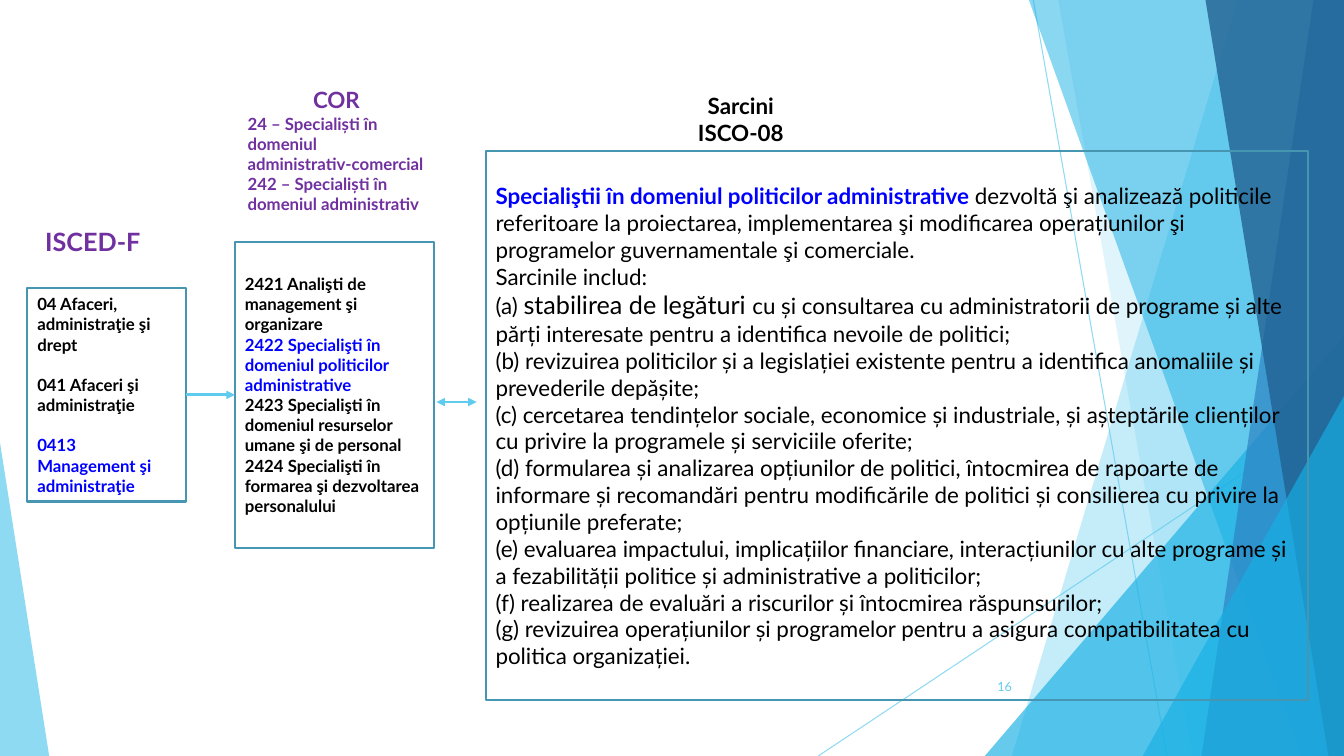
from dataclasses import dataclass
from typing import Optional

from lxml.etree import SubElement
from pptx import Presentation
from pptx.dml.color import RGBColor
from pptx.enum.shapes import MSO_CONNECTOR, MSO_SHAPE
from pptx.enum.text import MSO_ANCHOR, PP_ALIGN
from pptx.oxml.ns import qn
from pptx.util import Cm, Pt

PAGE_WIDTH = 33.87
PAGE_HEIGHT = 19.05


@dataclass(frozen=True)
class Theme:
    """Font, colours and type sizes of the slide."""

    font: str = "Lato"
    sky: str = "5FCBEF"
    azure: str = "17B0E4"
    blue: str = "2E83C3"
    navy: str = "226292"
    frame: str = "4696B1"
    ink: str = "000000"
    accent: str = "0000FF"
    heading: str = "7030A0"
    paper: str = "FFFFFF"
    tiny: float = 9
    small: float = 12
    body: float = 16
    large: float = 18


THEME = Theme()


@dataclass(frozen=True)
class Band:
    """A slanted band reaching the right edge of the page."""

    top: float
    bottom: float
    color: str
    opacity: int


@dataclass(frozen=True)
class Corner:
    """A translucent triangle standing on the bottom edge."""

    left: float
    width: float
    height: float
    apex: float
    color: str
    opacity: int


@dataclass(frozen=True)
class Span:
    """A stretch of text with its own look."""

    text: str
    size: float = THEME.body
    color: str = THEME.ink
    bold: bool = False


@dataclass(frozen=True)
class Para:
    """A paragraph made of spans."""

    spans: tuple[Span, ...]
    align: PP_ALIGN = PP_ALIGN.LEFT
    before: float = 0


@dataclass(frozen=True)
class Panel:
    """A rectangle holding text."""

    left: float
    top: float
    width: float
    height: float
    paras: tuple[Para, ...]
    line: Optional[str] = None
    fill: Optional[str] = None


def line_of(text: str, size: float = THEME.body, color: str = THEME.ink, bold: bool = False,
            align: PP_ALIGN = PP_ALIGN.LEFT, before: float = 0) -> Para:
    """Make a paragraph with a single look."""
    return Para((Span(text, size, color, bold),), align, before)


def title(text: str, size: float = THEME.body, color: str = THEME.heading) -> Para:
    """Make a centred bold paragraph."""
    return line_of(text, size, color, True, PP_ALIGN.CENTER)


def entry(text: str, color: str = THEME.ink, before: float = 0) -> Para:
    """Make a small bold paragraph."""
    return line_of(text, THEME.small, color, True, before=before)


BAND_GROUPS = (
    (Band(31.19, 25.5, THEME.sky, 36), Band(26.67, 30.05, THEME.sky, 20)),
    (Band(25.93, 32.79, THEME.azure, 50), Band(33.1, 30.28, THEME.blue, 70),
     Band(30.38, 33.48, THEME.navy, 80)),
)
CORNERS = (
    Corner(24.82, 9.05, 10.59, 1, THEME.azure, 66),
    Corner(28.8, 5.07, 9.07, 1, THEME.azure, 66),
    Corner(0, 1.24, 7.9, 0, THEME.sky, 70),
)
PAGE_NUMBER = Panel(23.85, 16.79, 1.9, 1.02, (
    line_of("16", THEME.tiny, THEME.sky, align=PP_ALIGN.RIGHT),))
ISCED = Panel(0.69, 7.26, 3.99, 5.38, (
    entry("04 Afaceri, administraţie şi drept"),
    entry("041 Afaceri şi administraţie", before=14.4),
    entry("0413 Management şi administraţie", THEME.accent, before=14.4),
), THEME.frame)
TASKS = Panel(12.24, 3.81, 20.73, 13.84, (
    Para((Span("Specialiştii în domeniul politicilor administrative ", color=THEME.accent, bold=True),
          Span("dezvoltă şi analizează politicile referitoare la proiectarea, implementarea şi "
               "modificarea operațiunilor şi programelor guvernamentale şi comerciale."))),
    line_of("Sarcinile includ:"),
    Para((Span("(a) "), Span("stabilirea de legături ", THEME.large),
          Span("cu și consultarea cu administratorii de programe și alte părți interesate "
               "pentru a identifica nevoile de politici;"))),
    line_of("(b) revizuirea politicilor și a legislației existente pentru a identifica "
            "anomaliile și prevederile depășite;"),
    line_of("(c) cercetarea tendințelor sociale, economice și industriale, și așteptările "
            "clienților cu privire la programele și serviciile oferite;"),
    line_of("(d) formularea și analizarea opțiunilor de politici, întocmirea de rapoarte de "
            "informare și recomandări pentru modificările de politici și consilierea cu "
            "privire la opțiunile preferate;"),
    line_of("(e) evaluarea impactului, implicațiilor financiare, interacțiunilor cu alte "
            "programe și a fezabilității politice și administrative a politicilor;"),
    line_of("(f) realizarea de evaluări a riscurilor și întocmirea răspunsurilor;"),
    line_of("(g) revizuirea operațiunilor și programelor pentru a asigura compatibilitatea "
            "cu politica organizației."),
), THEME.frame)
OCCUPATIONS = Panel(5.92, 6.1, 5.03, 7.7, (
    entry("2421 Analişti de management şi organizare"),
    entry("2422 Specialişti în domeniul politicilor administrative", THEME.accent),
    entry("2423 Specialişti în domeniul resurselor umane şi de personal"),
    entry("2424 Specialişti în formarea şi dezvoltarea personalului"),
), THEME.frame)
HEADINGS = (
    Panel(0.69, 5.33, 3.3, 1.5, (title("ISCED-F", THEME.large),)),
    Panel(16.18, 2.24, 4.98, 1.5, (title("Sarcini", color=THEME.ink),
                                   title("ISCO-08", color=THEME.ink))),
    Panel(5.99, 2.24, 4.98, 3.1, (
        title("COR"),
        entry("24 – Specialiști în domeniul administrativ-comercial", THEME.heading),
        entry("242 – Specialiști în domeniul administrativ", THEME.heading),
    ), fill=THEME.paper),
)


def fade(shape, opacity: int) -> None:
    """Make the colours of a shape translucent."""
    for color in shape.element.spPr.iter(qn("a:srgbClr")):
        SubElement(color, qn("a:alpha"), val=str(opacity * 1000))


def paint(shape, color: str, opacity: int) -> None:
    """Fill a shape with a translucent colour and no outline."""
    shape.shadow.inherit = False
    shape.line.fill.background()
    shape.fill.solid()
    shape.fill.fore_color.rgb = RGBColor.from_string(color)
    fade(shape, opacity)


def draw_band(page, band: Band) -> None:
    """Draw a band from the top to the bottom of the page."""
    builder = page.shapes.build_freeform(Cm(band.top), 0)
    corners = ((PAGE_WIDTH, 0), (PAGE_WIDTH, PAGE_HEIGHT), (band.bottom, PAGE_HEIGHT))
    builder.add_line_segments([(Cm(x), Cm(y)) for x, y in corners])
    paint(builder.convert_to_shape(), band.color, band.opacity)


def draw_corner(page, corner: Corner) -> None:
    """Draw a triangle on the bottom edge."""
    shape = page.shapes.add_shape(
        MSO_SHAPE.ISOSCELES_TRIANGLE, Cm(corner.left), Cm(PAGE_HEIGHT - corner.height),
        Cm(corner.width), Cm(corner.height))
    shape.adjustments[0] = corner.apex
    paint(shape, corner.color, corner.opacity)


def style(font, span: Span) -> None:
    """Give a font the look of a span."""
    font.name = THEME.font
    font.size = Pt(span.size)
    font.bold = span.bold
    font.color.rgb = RGBColor.from_string(span.color)


def draw_panel(page, panel: Panel):
    """Draw a rectangle with its text and return it."""
    place = [Cm(value) for value in (panel.left, panel.top, panel.width, panel.height)]
    if panel.line or panel.fill:
        box = page.shapes.add_shape(MSO_SHAPE.RECTANGLE, *place)
        box.shadow.inherit = False
        box.fill.background()
        box.line.fill.background()
    else:
        box = page.shapes.add_textbox(*place)
    if panel.fill:
        box.fill.solid()
        box.fill.fore_color.rgb = RGBColor.from_string(panel.fill)
    if panel.line:
        box.line.color.rgb = RGBColor.from_string(panel.line)
        box.line.width = Pt(1.5)
    frame = box.text_frame
    frame.word_wrap = True
    frame.vertical_anchor = MSO_ANCHOR.MIDDLE
    for index, para in enumerate(panel.paras):
        paragraph = frame.add_paragraph() if index else frame.paragraphs[0]
        paragraph.alignment = para.align
        if para.before:
            paragraph.space_before = Pt(para.before)
        for span in para.spans:
            run = paragraph.add_run()
            run.text = span.text
            style(run.font if len(para.spans) > 1 else paragraph.font, span)
    return box


def draw_line(page, start: tuple[float, float], end: tuple[float, float], width: float,
              arrows: tuple[str, ...] = ()):
    """Draw a straight line with the named arrowheads and return it."""
    line = page.shapes.add_connector(MSO_CONNECTOR.STRAIGHT, *(Cm(value) for value in start + end))
    line.line.color.rgb = RGBColor.from_string(THEME.sky)
    line.line.width = Pt(width)
    for arrow in arrows:
        SubElement(line.line._get_or_add_ln(), qn(f"a:{arrow}"), type="triangle")
    SubElement(line.element.spPr, qn("a:effectLst"))
    return line


def draw_backdrop(page) -> None:
    """Draw the facets behind the text."""
    for start, end in (((26.04, 0), (29.41, PAGE_HEIGHT)),
                       ((PAGE_WIDTH, 10.24), (20.62, PAGE_HEIGHT))):
        fade(draw_line(page, start, end, 0.75), 70)
    for bands, corner in zip(BAND_GROUPS, CORNERS):
        for band in bands:
            draw_band(page, band)
        draw_corner(page, corner)
    draw_corner(page, CORNERS[-1])


def main() -> None:
    """Build the slide and save it."""
    deck = Presentation()
    deck.slide_width, deck.slide_height = Cm(PAGE_WIDTH), Cm(PAGE_HEIGHT)
    page = deck.slides.add_slide(deck.slide_layouts[6])
    draw_backdrop(page)
    draw_panel(page, PAGE_NUMBER)
    isced = draw_panel(page, ISCED)
    draw_panel(page, TASKS)
    occupations = draw_panel(page, OCCUPATIONS)
    link = draw_line(page, (4.68, 9.95), (5.92, 9.95), 0, ("tailEnd",))
    link.begin_connect(isced, 3)
    link.end_connect(occupations, 1)
    for heading in HEADINGS:
        draw_panel(page, heading)
    draw_line(page, (11, 10.13), (12.01, 10.13), 1, ("headEnd", "tailEnd"))


    deck.save("out.pptx")


if __name__ == "__main__":
    main()
